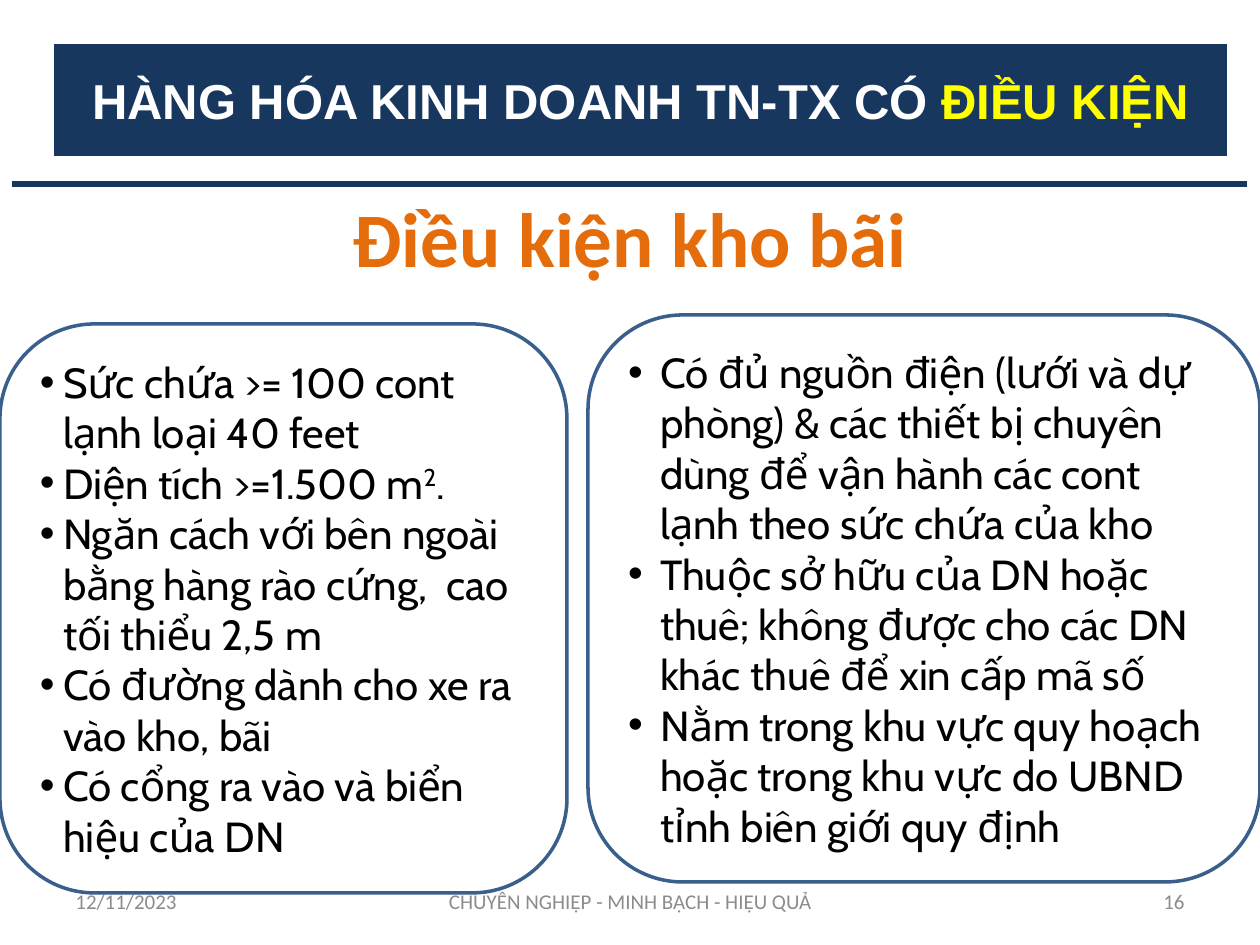
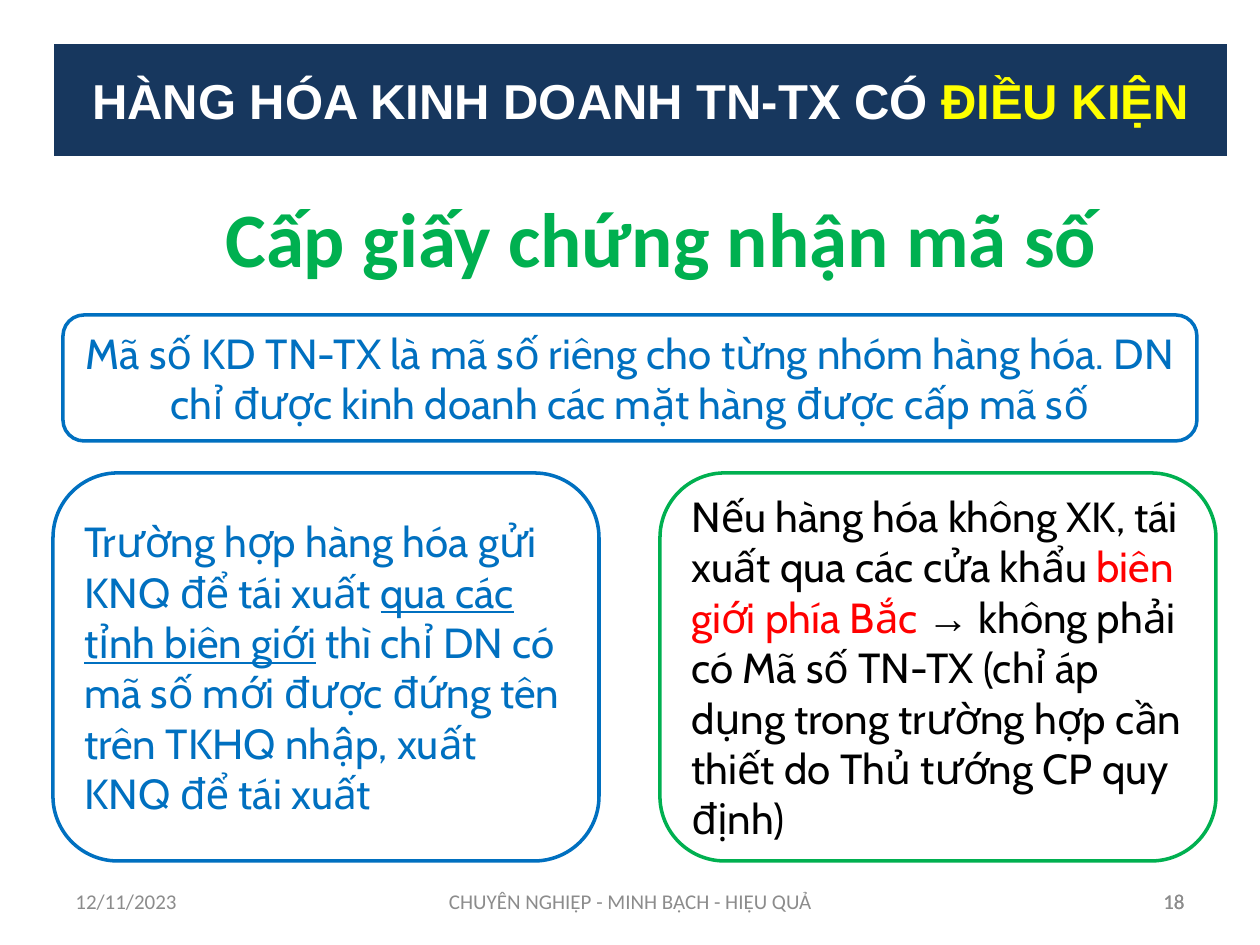
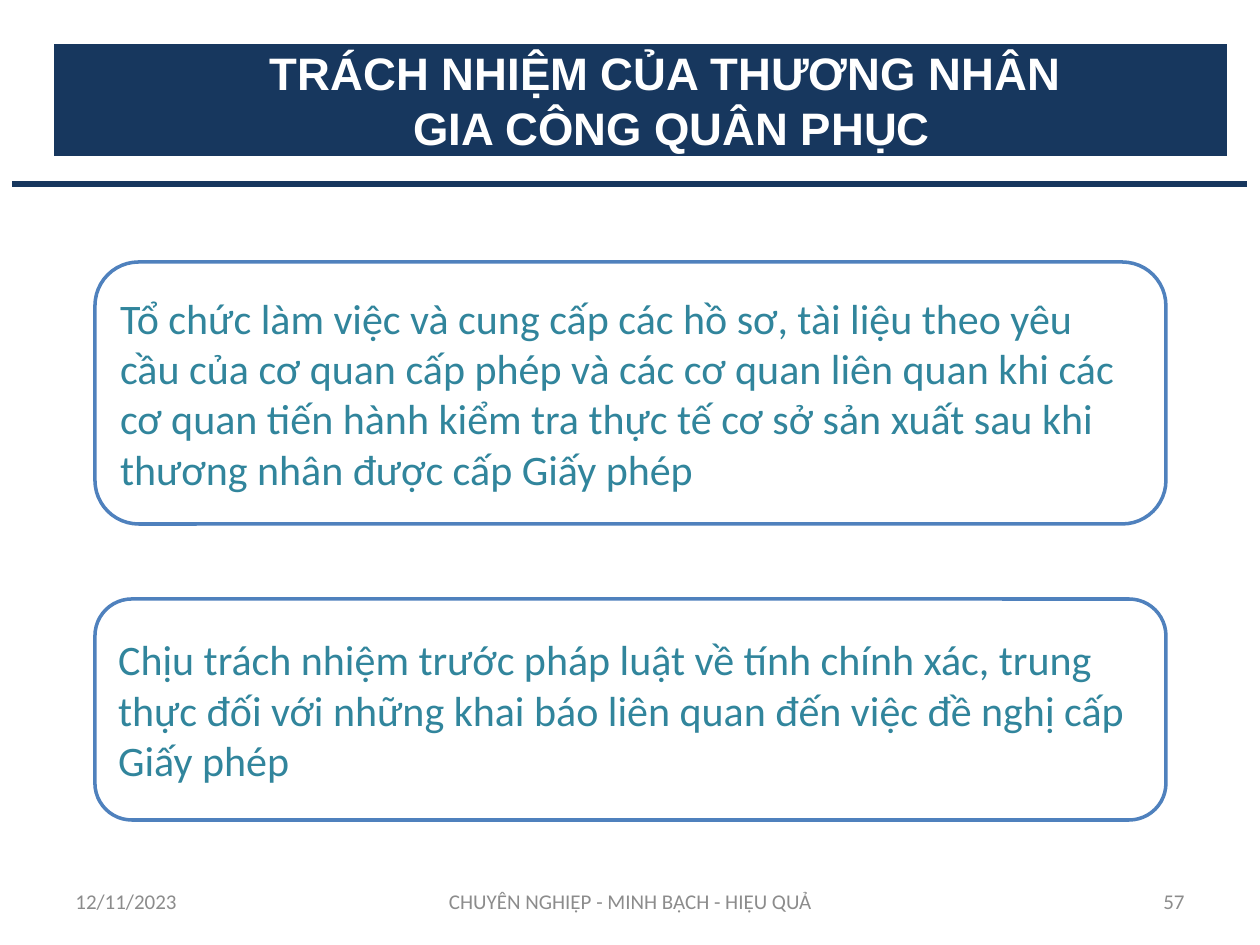
"""Build three slides on conditions and duties for regulated goods."""
from dataclasses import dataclass

from lxml import etree
from pptx import Presentation
from pptx.dml.color import RGBColor
from pptx.enum.shapes import MSO_SHAPE
from pptx.enum.text import MSO_ANCHOR, PP_ALIGN
from pptx.oxml.ns import qn
from pptx.util import Emu, Pt

RECTANGLE, ROUNDED = MSO_SHAPE.RECTANGLE, MSO_SHAPE.ROUNDED_RECTANGLE
LEFT, CENTER, RIGHT = PP_ALIGN.LEFT, PP_ALIGN.CENTER, PP_ALIGN.RIGHT
MIDDLE = MSO_ANCHOR.MIDDLE

EMU_PER_PX = 914400 / 126
SLIDE_WIDTH, SLIDE_HEIGHT = 1260, 945
LINE_WIDTH = 2

COLORS = {
    "navy": "17375E", "white": "FFFFFF", "yellow": "FFFF00", "gray": "8C8C8C",
    "orange": "E46C0A", "steel": "3A5F8C", "black": "000000", "green": "00B050",
    "blue": "0070C0", "red": "FF0000", "sky": "4F81BD", "teal": "31859C",
}


@dataclass(frozen=True)
class Area:
    """Position and size in px."""
    left: int
    top: int
    width: int
    height: int

    def emu(self) -> tuple[Emu, Emu, Emu, Emu]:
        """Return the four lengths in EMU."""
        return px(self.left), px(self.top), px(self.width), px(self.height)


@dataclass(frozen=True)
class Style:
    """Look shared by the paragraphs of one text."""
    font: str
    size: int
    color: str
    bold: bool = False
    align: PP_ALIGN = LEFT
    margin: int = 0
    bullet: bool = False


@dataclass(frozen=True)
class Span:
    """Piece of a paragraph that may differ from its style."""
    text: str
    color: str = ""
    underline: bool = False
    superscript: bool = False
    font: str = ""


Lines = list[list[Span]]


@dataclass(frozen=True)
class Card:
    """Rounded box with text."""
    area: Area
    border: str
    style: Style
    lines: Lines


@dataclass(frozen=True)
class Heading:
    """Large coloured line under the banner."""
    area: Area
    text: str
    color: str


@dataclass(frozen=True)
class Page:
    """Content of one slide."""
    banner: Lines
    banner_style: Style
    number: str
    number_areas: list[Area]
    cards: list[Card]
    heading: Heading | None = None
    ruled: bool = True


RULE = Area(10, 179, 1239, 10)
BANNER = Area(52, 42, 1177, 116)
DATE = Area(63, 876, 294, 50)
MOTTO = Area(431, 876, 399, 50)
NUMBER = Area(903, 876, 294, 50)
NARROW_NUMBER = Area(1092, 876, 105, 50)

BANNER_STYLE = Style("Arial", 28, "white", True, CENTER)
DUTY_BANNER_STYLE = Style("Arial", 26, "white", True, CENTER, margin=63)
CONDITION_BANNER = [[Span("HÀNG HÓA KINH DOANH TN-TX CÓ "), Span("ĐIỀU KIỆN", "yellow")]]
DUTY_STYLE = Style("Calibri", 24, "teal")


def bullets(margin: int) -> Style:
    """Return the bulleted style with a hanging margin."""
    return Style("Cabin", 24, "black", margin=margin, bullet=True)


def plain(*texts: str) -> Lines:
    """Turn each text into a paragraph of one span."""
    return [[Span(text)] for text in texts]


PAGES = [
    Page(
        CONDITION_BANNER, BANNER_STYLE, "16", [NUMBER],
        [
            Card(Area(0, 324, 567, 569), "steel", bullets(23), [
                *plain("Sức chứa >= 100 cont lạnh loại 40 feet"),
                [Span("Diện tích >=1.500 m"), Span("2", superscript=True), Span(".")],
                *plain(
                    "Ngăn cách với bên ngoài bằng hàng rào cứng,  cao tối thiểu 2,5 m",
                    "Có đường dành cho xe ra vào kho, bãi",
                    "Có cổng ra vào và biển hiệu của DN",
                ),
            ]),
            Card(Area(588, 315, 672, 567), "steel", bullets(32), plain(
                "Có đủ nguồn điện (lưới và dự phòng) & các thiết bị chuyên dùng "
                "để vận hành các cont lạnh theo sức chứa của kho",
                "Thuộc sở hữu của DN hoặc thuê; không được cho các DN khác thuê "
                "để xin cấp mã số",
                "Nằm trong khu vực quy hoạch hoặc trong khu vực do UBND tỉnh "
                "biên giới quy định",
            )),
        ],
        Heading(Area(42, 179, 1176, 116), "Điều kiện kho bãi", "orange"),
    ),
    Page(
        CONDITION_BANNER, BANNER_STYLE, "18", [NUMBER, NARROW_NUMBER],
        [
            Card(Area(53, 473, 546, 388), "blue", Style("Cabin", 24, "blue"), [[
                Span("Trường hợp hàng hóa gửi KNQ để tái xuất "),
                Span("qua các tỉnh biên giới", underline=True),
                Span(" thì chỉ DN có mã số mới được đứng tên trên TKHQ nhập, "
                     "xuất KNQ để tái xuất"),
            ]]),
            Card(Area(660, 473, 556, 388), "green", Style("Cabin", 24, "black"), [[
                Span("Nếu hàng hóa không XK, tái xuất qua các cửa khẩu "),
                Span("biên giới phía Bắc ", "red"),
                Span("→", font="Arial"),
                Span(" không phải có Mã số TN-TX (chỉ áp dụng trong trường hợp "
                     "cần thiết do Thủ tướng CP quy định)"),
            ]]),
            Card(Area(63, 315, 1134, 126), "blue",
                 Style("Cabin", 24, "blue", align=CENTER), plain(
                "Mã số KD TN-TX là mã số riêng cho từng nhóm hàng hóa. DN chỉ "
                "được kinh doanh các mặt hàng được cấp mã số",
            )),
        ],
        Heading(Area(84, 158, 1155, 158), "Cấp giấy chứng nhận mã số", "green"),
        ruled=False,
    ),
    Page(
        plain("TRÁCH NHIỆM CỦA THƯƠNG NHÂN ", "GIA CÔNG QUÂN PHỤC"),
        DUTY_BANNER_STYLE, "57", [NUMBER],
        [
            Card(Area(95, 262, 1071, 262), "sky", DUTY_STYLE, plain(
                "Tổ chức làm việc và cung cấp các hồ sơ, tài liệu theo yêu cầu "
                "của cơ quan cấp phép và các cơ quan liên quan khi các cơ quan "
                "tiến hành kiểm tra thực tế cơ sở sản xuất sau khi thương nhân "
                "được cấp Giấy phép",
            )),
            Card(Area(95, 599, 1071, 221), "sky", DUTY_STYLE, plain(
                "Chịu trách nhiệm trước pháp luật về tính chính xác, trung thực "
                "đối với những khai báo liên quan đến việc đề nghị cấp Giấy phép",
            )),
        ],
    ),
]


def px(length: int) -> Emu:
    """Convert px to EMU."""
    return Emu(round(length * EMU_PER_PX))


def rgb(name: str) -> RGBColor:
    """Look up a colour by name."""
    return RGBColor.from_string(COLORS[name])


def indent(paragraph, style: Style) -> None:
    """Set the left margin and the hanging bullet of a paragraph."""
    properties = paragraph._p.get_or_add_pPr()
    properties.set("marL", str(px(style.margin)))
    if style.bullet:
        properties.set("indent", str(-px(style.margin)))
        etree.SubElement(properties, qn("a:buFont"), typeface="Arial")
        etree.SubElement(properties, qn("a:buChar"), char="•")


def add_span(paragraph, span: Span) -> None:
    """Add a run with what differs from its paragraph."""
    run = paragraph.add_run()
    run.text = span.text
    if span.color:
        run.font.color.rgb = rgb(span.color)
    if span.underline:
        run.font.underline = True
    if span.superscript:
        run._r.get_or_add_rPr().set("baseline", "30000")
    if span.font:
        for tag in ("a:latin", "a:ea"):
            etree.SubElement(run._r.get_or_add_rPr(), qn(tag), typeface=span.font)


def write(shape, lines: Lines, style: Style) -> None:
    """Fill a shape with styled paragraphs."""
    frame = shape.text_frame
    frame.word_wrap = True
    frame.vertical_anchor = MIDDLE
    for index, spans in enumerate(lines):
        paragraph = frame.add_paragraph() if index else frame.paragraphs[0]
        paragraph.alignment = style.align
        if style.margin:
            indent(paragraph, style)
        paragraph.font.name = style.font
        paragraph.font.size = Pt(style.size)
        paragraph.font.bold = style.bold
        paragraph.font.color.rgb = rgb(style.color)
        for span in spans:
            add_span(paragraph, span)


def add_box(slide, kind: MSO_SHAPE, area: Area, fill: str, border: str):
    """Add a filled and outlined shape."""
    shape = slide.shapes.add_shape(kind, *area.emu())
    shape.shadow.inherit = False
    shape.fill.solid()
    shape.fill.fore_color.rgb = rgb(fill)
    shape.line.color.rgb = rgb(border)
    shape.line.width = Pt(LINE_WIDTH)
    return shape


def add_label(slide, area: Area, text: str, style: Style) -> None:
    """Add a text box with one line."""
    write(slide.shapes.add_textbox(*area.emu()), plain(text), style)


def add_footer(slide, page: Page) -> None:
    """Add date, motto and slide number."""
    labels = [
        (DATE, "12/11/2023", LEFT),
        (MOTTO, "CHUYÊN NGHIỆP - MINH BẠCH - HIỆU QUẢ", CENTER),
        *((area, page.number, RIGHT) for area in page.number_areas),
    ]
    for area, text, align in labels:
        add_label(slide, area, text, Style("Calibri", 12, "gray", align=align))


def add_page(presentation, page: Page) -> None:
    """Add one slide with everything on it."""
    slide = presentation.slides.add_slide(presentation.slide_layouts[6])
    if page.ruled:
        add_box(slide, RECTANGLE, RULE, "navy", "white")
    banner = add_box(slide, RECTANGLE, BANNER, "navy", "white")
    write(banner, page.banner, page.banner_style)
    add_footer(slide, page)
    if page.heading:
        style = Style("Calibri", 44, page.heading.color, True, CENTER)
        add_label(slide, page.heading.area, page.heading.text, style)
    for card in page.cards:
        box = add_box(slide, ROUNDED, card.area, "white", card.border)
        write(box, card.lines, card.style)


def main() -> None:
    """Build and save the presentation."""
    presentation = Presentation()
    presentation.slide_width = px(SLIDE_WIDTH)
    presentation.slide_height = px(SLIDE_HEIGHT)
    for page in PAGES:
        add_page(presentation, page)
    presentation.save("out.pptx")


if __name__ == "__main__":
    main()
